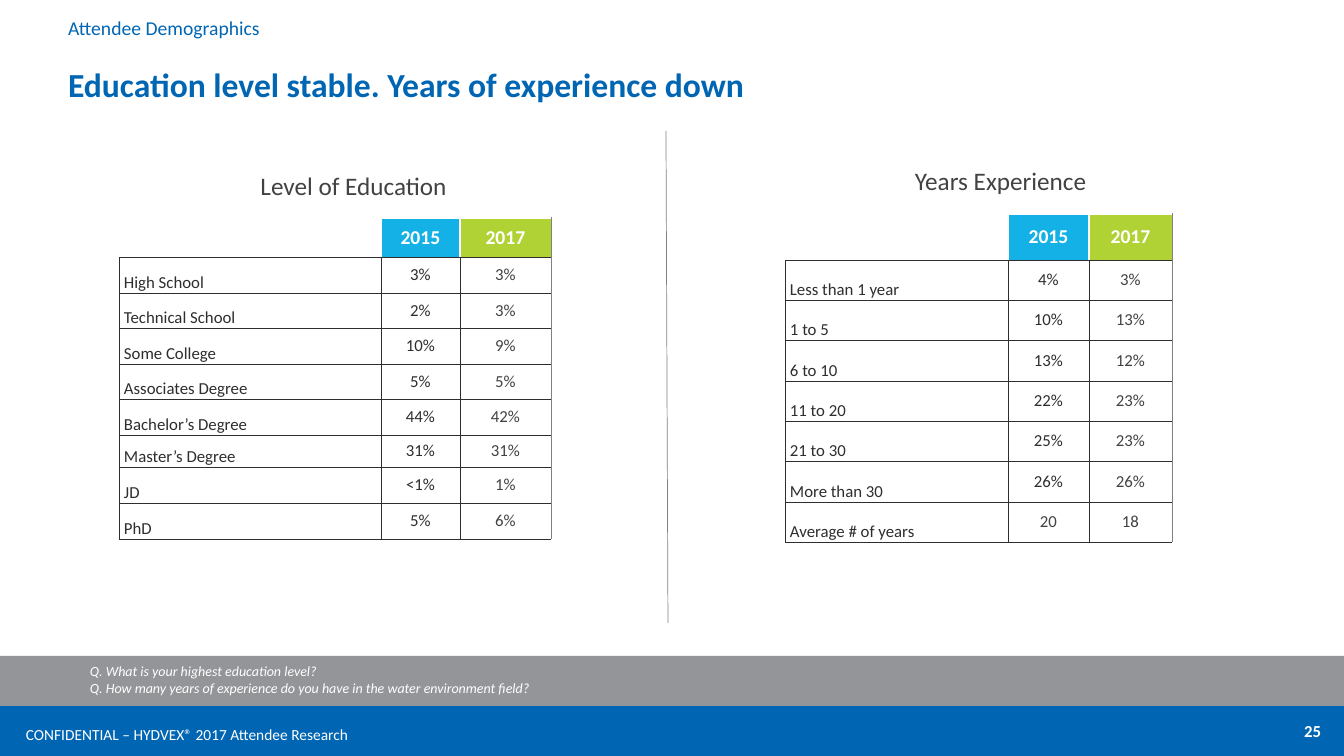
"""Build the attendee education and experience slide."""
from dataclasses import dataclass

import lxml.etree
import pptx
import pptx.dml.color
import pptx.enum.shapes
import pptx.enum.text
import pptx.oxml.ns
import pptx.util

EMU_PER_PX = 914400 / 100.8
FONT = "Calibri"
WHITE, BLUE, GRAY, RULE = "FFFFFF", "0066B3", "939598", "808080"
INK, SOFT_INK = "2F2D2E", "444143"
YEARS = (("2015", "14B1E7"), ("2017", "B0D235"))
ALIGN = pptx.enum.text.PP_ALIGN
ANCHOR = pptx.enum.text.MSO_ANCHOR


@dataclass(frozen=True)
class Box:
    left: int
    top: int
    width: int
    height: int


@dataclass(frozen=True)
class Style:
    size: int
    color: str
    bold: bool = False
    italic: bool = False
    align: ALIGN = ALIGN.LEFT


@dataclass(frozen=True)
class Label:
    box: Box
    text: str
    style: Style


@dataclass(frozen=True)
class Answer:
    name: str
    in_2015: str
    in_2017: str
    height: int
    color_2015: str = INK


@dataclass(frozen=True)
class Survey:
    left: int
    top: int
    columns: tuple[int, int, int]
    header_height: int
    answers: tuple[Answer, ...]


HEADING = Style(18, SOFT_INK, align=ALIGN.CENTER)
QUESTIONS = ("Q. What is your highest education level?\n"
             "Q. How many years of experience do you have in the water environment field?")
BARS = ((Box(0, 706, 1344, 50), BLUE), (Box(0, 656, 1344, 50), GRAY))
LABELS = (
    Label(Box(16, 720, 766, 29), "CONFIDENTIAL – HYDVEX® 2017 Attendee Research", Style(11, WHITE)),
    Label(Box(1029, 716, 302, 40), "25", Style(12, WHITE, bold=True, align=ALIGN.RIGHT)),
    Label(Box(157, 165, 393, 41), "Level of Education", HEADING),
    Label(Box(804, 160, 393, 41), "Years Experience", HEADING),
    Label(Box(80, 658, 1136, 44), QUESTIONS, Style(10, WHITE, italic=True)),
)
SURVEYS = (
    Survey(119, 218, (262, 79, 91), 39, (
        Answer("High School", "3%", "3%", 36),
        Answer("Technical School", "2%", "3%", 35),
        Answer("Some College", "10%", "9%", 36),
        Answer("Associates Degree", "5%", "5%", 35),
        Answer("Bachelor’s Degree", "44%", "42%", 36),
        Answer("Master’s Degree", "31%", "31%", 32),
        Answer("JD", "<1%", "1%", 36),
        Answer("PhD", "5%", "6%", 36),
    )),
    Survey(785, 214, (223, 81, 83), 46, (
        Answer("Less than 1 year", "4%", "3%", 40),
        Answer("1 to 5", "10%", "13%", 40),
        Answer("6 to 10", "13%", "12%", 41),
        Answer("11 to 20", "22%", "23%", 40),
        Answer("21 to 30", "25%", "23%", 40),
        Answer("More than 30", "26%", "26%", 41),
        Answer("Average # of years", "20", "18", 40, SOFT_INK),
    )),
)


def px(length: int) -> int:
    """Turn pixels into EMU."""
    return round(length * EMU_PER_PX)


def rgb(color: str) -> pptx.dml.color.RGBColor:
    """Turn a hex string into a colour."""
    return pptx.dml.color.RGBColor.from_string(color)


def edges(box: Box) -> tuple[int, int, int, int]:
    """Give a box in EMU."""
    return px(box.left), px(box.top), px(box.width), px(box.height)


def write(frame, text: str, style: Style) -> None:
    """Put styled text in a text frame."""
    frame.text = text
    for paragraph in frame.paragraphs:
        paragraph.alignment = style.align
        for run in paragraph.runs:
            run.font.name = FONT
            run.font.size = pptx.util.Pt(style.size)
            run.font.bold = style.bold
            run.font.italic = style.italic
            run.font.color.rgb = rgb(style.color)


def fill_placeholder(holder, label: Label, anchor: ANCHOR) -> None:
    """Move a placeholder and write its unbulleted line."""
    holder.left, holder.top, holder.width, holder.height = edges(label.box)
    frame = holder.text_frame
    write(frame, label.text, label.style)
    frame.auto_size = pptx.enum.text.MSO_AUTO_SIZE.NONE
    frame.vertical_anchor = anchor
    paragraph = frame.paragraphs[0]
    properties = paragraph._p.get_or_add_pPr()
    properties.set("marL", "0")
    properties.set("indent", "0")
    lxml.etree.SubElement(properties, pptx.oxml.ns.qn("a:buNone"))
    paragraph.line_spacing = 0.9
    paragraph.space_before = pptx.util.Pt(0)


def add_bar(slide, box: Box, color: str) -> None:
    """Draw a full-width footer bar."""
    bar = slide.shapes.add_shape(pptx.enum.shapes.MSO_SHAPE.RECTANGLE, *edges(box))
    bar.shadow.inherit = False
    bar.fill.solid()
    bar.fill.fore_color.rgb = rgb(color)
    bar.line.fill.background()


def add_label(slide, label: Label) -> None:
    """Draw a wrapped text box."""
    frame = slide.shapes.add_textbox(*edges(label.box)).text_frame
    frame.word_wrap = True
    write(frame, label.text, label.style)


def set_borders(cell, header: bool, last: bool) -> None:
    """Draw the four borders of a cell."""
    side = (WHITE, 1) if header else (INK, 0.25)
    right = (RULE, 0.5) if last else side
    sides = {"lnL": side, "lnR": right, "lnT": side, "lnB": (INK, 0.25)}
    properties = cell._tc.get_or_add_tcPr()
    for tag, (color, points) in sides.items():
        line = lxml.etree.SubElement(properties, pptx.oxml.ns.qn(f"a:{tag}"), w=str(pptx.util.Pt(points)))
        solid = lxml.etree.SubElement(line, pptx.oxml.ns.qn("a:solidFill"))
        lxml.etree.SubElement(solid, pptx.oxml.ns.qn("a:srgbClr"), val=color)


def add_survey(slide, survey: Survey) -> None:
    """Draw one table of answers by year."""
    heights = [survey.header_height, *(answer.height for answer in survey.answers)]
    box = Box(survey.left, survey.top, sum(survey.columns), sum(heights))
    table = slide.shapes.add_table(len(heights), len(survey.columns), *edges(box)).table
    table.first_row = table.horz_banding = False
    for column, width in zip(table.columns, survey.columns):
        column.width = px(width)
    for row, height in zip(table.rows, heights):
        row.height = px(height)
    rows = [[("", WHITE, WHITE), *((year, WHITE, fill) for year, fill in YEARS)]]
    rows += [[(a.name, INK, WHITE), (a.in_2015, a.color_2015, WHITE), (a.in_2017, SOFT_INK, WHITE)]
             for a in survey.answers]
    for r, row in enumerate(rows):
        for c, (text, color, fill) in enumerate(row):
            cell = table.cell(r, c)
            set_borders(cell, header=r == 0, last=c == 2)
            cell.fill.solid()
            cell.fill.fore_color.rgb = rgb(fill)
            cell.margin_left = px(0 if c else 5)
            cell.margin_right = cell.margin_top = cell.margin_bottom = 0
            cell.vertical_anchor = ANCHOR.MIDDLE if c else ANCHOR.BOTTOM
            align = ALIGN.CENTER if c else ALIGN.LEFT
            write(cell.text_frame, text, Style(12 if r else 14, color, bold=r == 0, align=align))


def add_divider(slide) -> None:
    """Draw the line between the two tables."""
    divider = slide.shapes.add_connector(
        pptx.enum.shapes.MSO_CONNECTOR.STRAIGHT, px(666), px(131), px(668), px(623))
    divider.line.color.rgb = rgb(RULE)
    divider.line.width = pptx.util.Pt(0.5)
    lxml.etree.SubElement(divider._element.spPr, pptx.oxml.ns.qn("a:effectLst"))


def main() -> None:
    """Build and save the slide."""
    deck = pptx.Presentation()
    deck.slide_width, deck.slide_height = px(1344), px(756)
    slide = deck.slides.add_slide(deck.slide_layouts[1])
    title = Label(Box(58, 63, 1153, 47), "Education level stable. Years of experience down",
                  Style(24, BLUE, bold=True))
    section = Label(Box(58, 14, 259, 35), "Attendee Demographics", Style(14, BLUE))
    fill_placeholder(slide.shapes.title, title, ANCHOR.MIDDLE)
    fill_placeholder(slide.placeholders[1], section, ANCHOR.TOP)
    for box, color in BARS:
        add_bar(slide, box, color)
    for label in LABELS:
        add_label(slide, label)
    for survey in SURVEYS:
        add_survey(slide, survey)
    add_divider(slide)
    deck.save("out.pptx")


if __name__ == "__main__":
    main()
